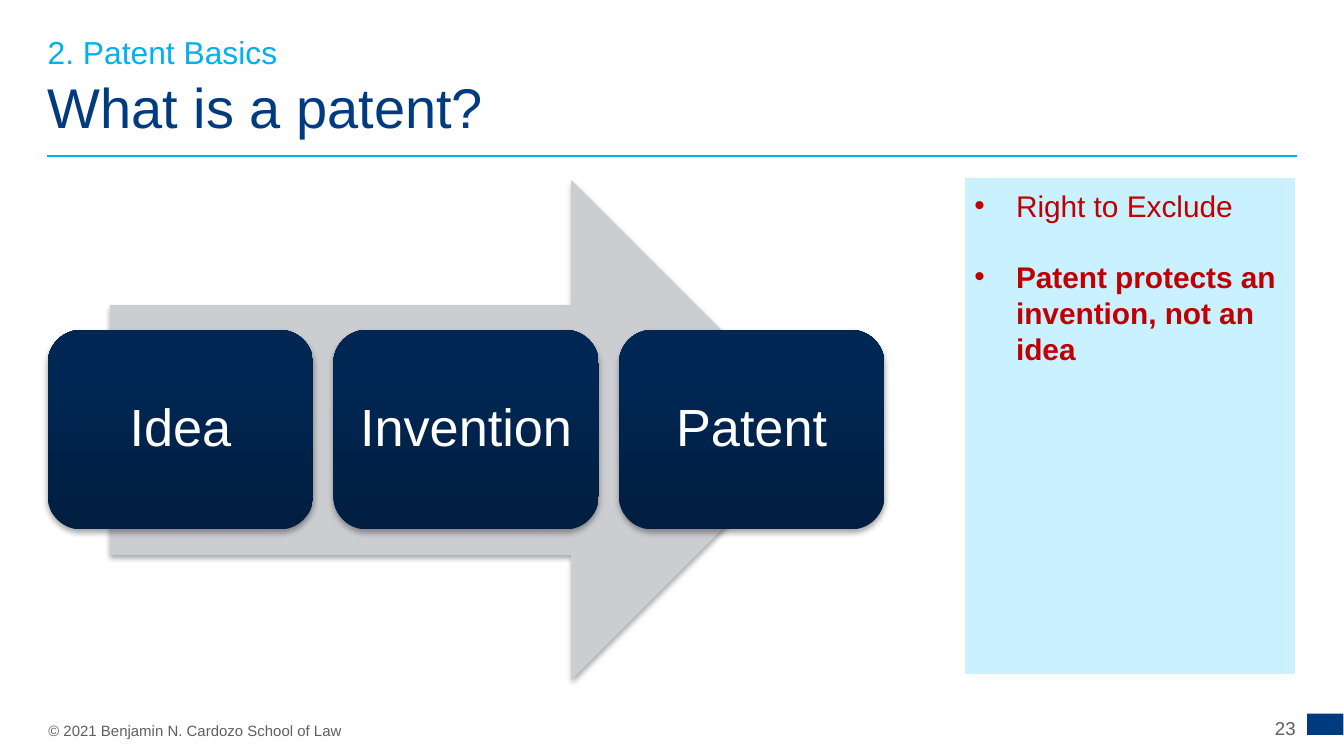
from lxml import etree
from pptx import Presentation
from pptx.dml.color import RGBColor
from pptx.enum.shapes import MSO_CONNECTOR, MSO_SHAPE
from pptx.enum.text import MSO_ANCHOR, PP_ALIGN
from pptx.oxml import parse_xml
from pptx.oxml.ns import nsdecls, qn
from pptx.util import Pt

PX = 4572  # 200 px to the inch
COLORS = {name: RGBColor.from_string(value) for name, value in {
    "navy": "003B80", "cyan": "00B0F0", "gray": "5F5F5F", "arrow": "CCCDD1",
    "step_bottom": "001E40", "step_top": "002753", "panel": "C9F1FF",
    "red": "C00000", "white": "FFFFFF"}.items()}


def write(shape, texts, size, color, align=PP_ALIGN.LEFT,
          anchor=MSO_ANCHOR.TOP, spacing=1.0, inset=0):
    frame = shape.text_frame
    frame.word_wrap = True
    frame.vertical_anchor = anchor
    frame.margin_left = frame.margin_right = inset * PX
    frame.margin_top = frame.margin_bottom = inset * PX
    frame.text = "\n".join(texts)
    for paragraph in frame.paragraphs:
        paragraph.alignment = align
        paragraph.line_spacing = spacing
        paragraph.font.name = "Arial"
        paragraph.font.size = Pt(size)
        paragraph.font.color.rgb = COLORS[color]
    return frame.paragraphs


def add_shadow(shape):
    shape.shadow.inherit = False
    shape._element.spPr.find(qn("a:effectLst")).append(parse_xml(
        f'<a:outerShdw {nsdecls("a")} blurRad="40000" dist="23000" dir="5400000" '
        'rotWithShape="0"><a:srgbClr val="000000"><a:alpha val="35000"/>'
        '</a:srgbClr></a:outerShdw>'))


prs = Presentation()
prs.slide_width, prs.slide_height = 2000 * PX, 1125 * PX
slide = prs.slides.add_slide(prs.slide_layouts[6])
shapes = slide.shapes

# Header rule and footer marker
marker = shapes.add_shape(MSO_SHAPE.RECTANGLE, 1945 * PX, 1062 * PX, 54 * PX, 32 * PX)
marker.shadow.inherit = False
marker.fill.solid()
marker.fill.fore_color.rgb = COLORS["navy"]
marker.line.fill.background()

rule = shapes.add_connector(MSO_CONNECTOR.STRAIGHT, 1930 * PX, 232 * PX, 70 * PX, 232 * PX)
rule.line.color.rgb = COLORS["cyan"]
rule.line.width = Pt(1)
etree.SubElement(rule._element.spPr, qn("a:effectLst"))

# Section, title, copyright and page number
for text, left, top, width, height, size, color, align, anchor, spacing in [
    ("2. Patent Basics", 71, 62, 1858, 48, 17, "cyan", PP_ALIGN.LEFT, MSO_ANCHOR.TOP, 0.75),
    ("What is a patent?", 71, 86, 1858, 122, 30, "navy", PP_ALIGN.LEFT, MSO_ANCHOR.BOTTOM, 0.85),
    ("© 2021 Benjamin N. Cardozo School of Law", 72, 1074, 1714, 26, 8, "gray",
     PP_ALIGN.LEFT, MSO_ANCHOR.TOP, 1.0),
    ("23", 1820, 1070, 108, 32, 10, "gray", PP_ALIGN.RIGHT, MSO_ANCHOR.MIDDLE, 0.9),
]:
    label = shapes.add_textbox(left * PX, top * PX, width * PX, height * PX)
    write(label, [text], size, color, align, anchor, spacing)

# Process arrow
arrow = shapes.add_shape(MSO_SHAPE.RIGHT_ARROW, 164 * PX, 268 * PX, 1058 * PX, 744 * PX)
arrow.fill.solid()
arrow.fill.fore_color.rgb = COLORS["arrow"]
arrow.line.fill.background()
add_shadow(arrow)

# Steps from idea to patent
for i, name in enumerate(["Idea", "Invention", "Patent"]):
    step = shapes.add_shape(MSO_SHAPE.ROUNDED_RECTANGLE,
                            (71 + 425 * i) * PX, 491 * PX, 395 * PX, 297 * PX)
    step.fill.gradient()
    step.fill.gradient_angle = 90
    bottom, top = step.fill.gradient_stops
    bottom.position, bottom.color.rgb = 0, COLORS["step_bottom"]
    top.position, top.color.rgb = 0.8, COLORS["step_top"]
    step.line.fill.background()
    add_shadow(step)
    write(step, [name], 28, "white", PP_ALIGN.CENTER, MSO_ANCHOR.MIDDLE, 0.9, inset=16)

# Takeaway panel
panel = shapes.add_shape(MSO_SHAPE.RECTANGLE, 1434 * PX, 263 * PX, 495 * PX, 741 * PX)
panel.shadow.inherit = False
panel.fill.solid()
panel.fill.fore_color.rgb = COLORS["panel"]
panel.line.color.rgb = COLORS["white"]
panel.line.width = Pt(1)
takeaways = write(panel, ["Right to Exclude", "Patent protects an invention, not an idea"],
                  16, "red", inset=16)
for takeaway in takeaways:
    properties = takeaway._p.get_or_add_pPr()
    properties.set("marL", str(62 * PX))
    properties.set("indent", str(-62 * PX))
    run_defaults = properties.find(qn("a:defRPr"))
    run_defaults.addprevious(parse_xml(f'<a:buFont {nsdecls("a")} typeface="Arial"/>'))
    run_defaults.addprevious(parse_xml(f'<a:buChar {nsdecls("a")} char="•"/>'))
takeaways[1].space_before = Pt(19)
takeaways[1].font.bold = True

prs.save("out.pptx")
